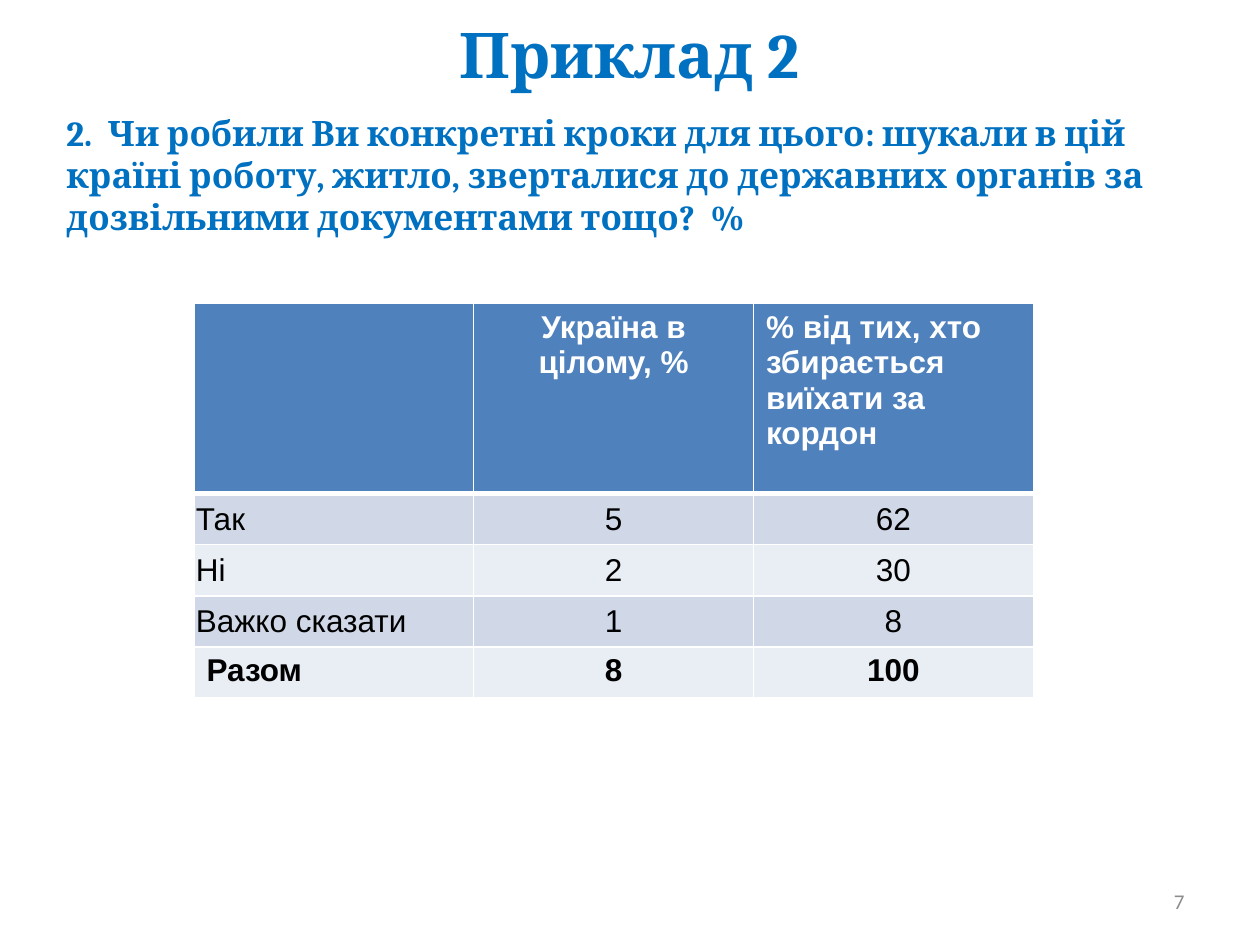
from lxml import etree
from pptx import Presentation
from pptx.dml.color import RGBColor
from pptx.enum.text import MSO_ANCHOR, PP_ALIGN
from pptx.oxml.ns import qn
from pptx.util import Cm, Pt

LEFT, CENTER, RIGHT = PP_ALIGN.LEFT, PP_ALIGN.CENTER, PP_ALIGN.RIGHT
TOP, MIDDLE = MSO_ANCHOR.TOP, MSO_ANCHOR.MIDDLE
COLORS = {
    "heading": "0070C0", "header": "4F81BD", "odd": "D0D8E8", "even": "E9EDF4",
    "white": "FFFFFF", "black": "000000", "gray": "8C8C8C",
}


def write(frame, text, font="Arial", size=18, color="black", bold=False, align=LEFT, anchor=TOP):
    frame.word_wrap = True
    frame.vertical_anchor = anchor
    para = frame.paragraphs[0]
    para.alignment = align
    span = para.add_run()
    span.text = text
    span.font.name = font
    span.font.size = Pt(size)
    span.font.bold = bold
    span.font.color.rgb = RGBColor.from_string(COLORS[color])


def set_borders(cell, **widths):
    properties = cell._tc.get_or_add_tcPr()
    for position, (side, width) in enumerate(widths.items()):
        line = etree.Element(qn(f"a:ln{side}"), w=str(Pt(width)))
        fill = etree.SubElement(line, qn("a:solidFill"))
        etree.SubElement(fill, qn("a:srgbClr"), val=COLORS["white"])
        properties.insert(position, line)


deck = Presentation()
deck.slide_width, deck.slide_height = Cm(25.4), Cm(19.05)
page = deck.slides.add_slide(deck.slide_layouts[5])

# Title
title = page.shapes.title
title.left, title.top, title.width, title.height = Cm(2.29), Cm(0), Cm(20.8), Cm(2.13)
write(title.text_frame, "Приклад 2", font="Cambria", size=36, color="heading",
      bold=True, align=CENTER, anchor=MIDDLE)

# Survey question
question = page.shapes.add_textbox(Cm(1.09), Cm(2.13), Cm(23.04), Cm(15.8))
write(question.text_frame,
      "2.  Чи робили Ви конкретні кроки для цього: шукали в цій країні роботу, житло, "
      "зверталися до державних органів за дозвільними документами тощо?  %",
      font="Cambria", size=20, color="heading", bold=True)

# Answer table
rows = [
    ("", "Україна в цілому, %", "% від тих, хто збирається виїхати за кордон"),
    ("Так", "5", "62"),
    ("Ні", "2", "30"),
    ("Важко сказати", "1", "8"),
    ("Разом", "8", "100"),
]
header_height, row_height, column_width = Cm(3.83), Cm(1.03), Cm(5.64)
last = len(rows) - 1
table = page.shapes.add_table(len(rows), 3, Cm(3.91), Cm(6.12), column_width * 3,
                              header_height + row_height * last).table
for column in table.columns:
    column.width = column_width
for r, values in enumerate(rows):
    table.rows[r].height = row_height if r else header_height
    is_answer = 0 < r < last
    for c, value in enumerate(values):
        cell = table.cell(r, c)
        cell.fill.solid()
        fill_name = "header" if r == 0 else "odd" if r % 2 else "even"
        cell.fill.fore_color.rgb = RGBColor.from_string(COLORS[fill_name])
        set_borders(cell, L=1, R=1, T=3 if r == 1 else 1, B=1 if r else 3)
        if is_answer:
            cell.margin_left = cell.margin_right = Cm(0.04)
            cell.margin_top = cell.margin_bottom = Cm(0.04)
        cell.vertical_anchor = MIDDLE if is_answer else TOP
        if value:
            centered = c == 1 or (c == 2 and r > 0)
            write(cell.text_frame, value, color="black" if r else "white",
                  bold=not is_answer, align=CENTER if centered else LEFT,
                  anchor=cell.vertical_anchor)

# Page number
number = page.shapes.add_textbox(Cm(18.2), Cm(17.65), Cm(5.93), Cm(1.02))
write(number.text_frame, "7", font="Calibri", size=12, color="gray", align=RIGHT, anchor=MIDDLE)

deck.save("out.pptx")
